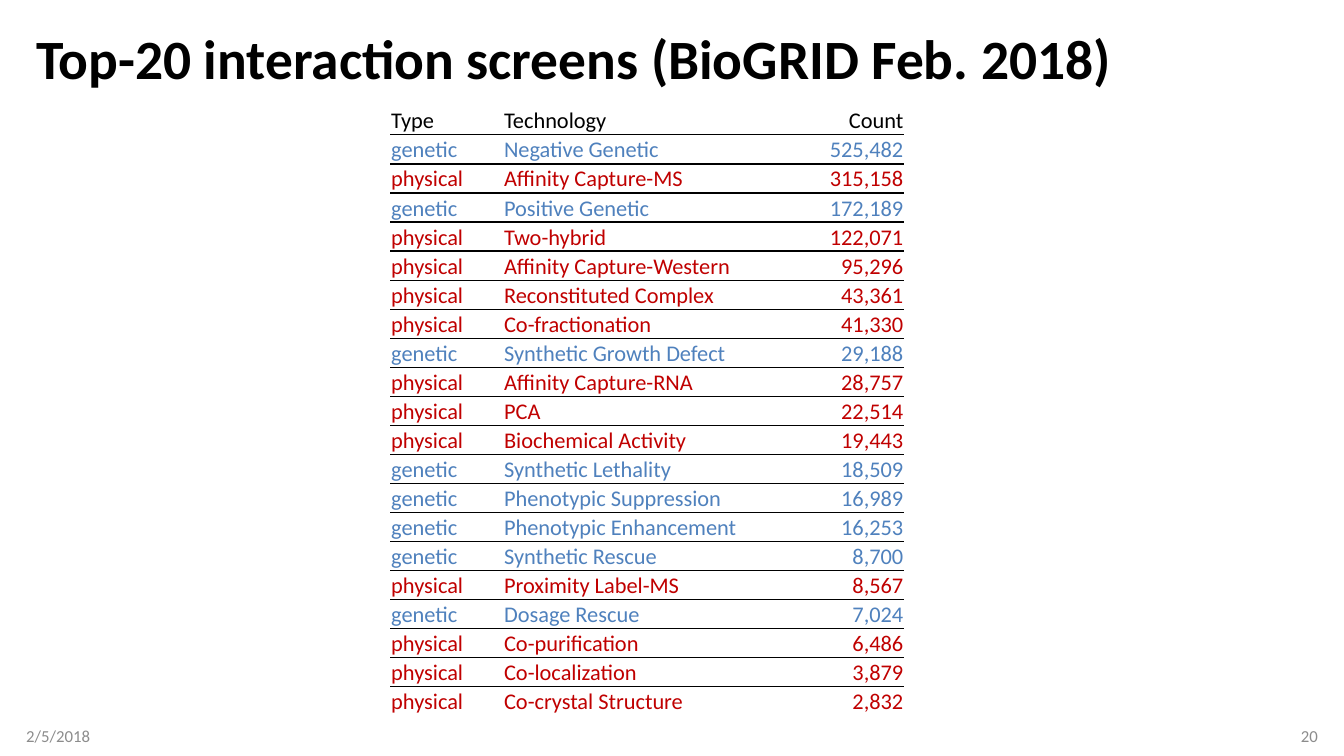
from dataclasses import dataclass

from pptx import Presentation
from pptx import util as u
from pptx.dml.color import RGBColor
from pptx.enum import text
from pptx.oxml import parse_xml
from pptx.oxml.ns import nsdecls


@dataclass(frozen=True)
class Theme:
    """Font, colours and type sizes of the slide."""
    font: str = "Calibri"
    ink: str = "000000"
    footer: str = "8C8C8C"
    genetic: str = "4F81BD"
    physical: str = "C00000"
    title_size: float = 39.6
    table_size: float = 16
    footer_size: float = 12
    plain_table: str = "{2D5ABB26-0587-4C30-8999-92F81FD0307C}"


THEME = Theme()
LEFT, RIGHT = text.PP_ALIGN.LEFT, text.PP_ALIGN.RIGHT
HEADINGS = ("Type", "Technology", "Count")
COLUMN_WIDTHS = (1.12, 2.86, 1.12)
ALIGNMENTS = (LEFT, LEFT, RIGHT)
SCREENS = (
    ("genetic", "Negative Genetic", 525482),
    ("physical", "Affinity Capture-MS", 315158),
    ("genetic", "Positive Genetic", 172189),
    ("physical", "Two-hybrid", 122071),
    ("physical", "Affinity Capture-Western", 95296),
    ("physical", "Reconstituted Complex", 43361),
    ("physical", "Co-fractionation", 41330),
    ("genetic", "Synthetic Growth Defect", 29188),
    ("physical", "Affinity Capture-RNA", 28757),
    ("physical", "PCA", 22514),
    ("physical", "Biochemical Activity", 19443),
    ("genetic", "Synthetic Lethality", 18509),
    ("genetic", "Phenotypic Suppression", 16989),
    ("genetic", "Phenotypic Enhancement", 16253),
    ("genetic", "Synthetic Rescue", 8700),
    ("physical", "Proximity Label-MS", 8567),
    ("genetic", "Dosage Rescue", 7024),
    ("physical", "Co-purification", 6486),
    ("physical", "Co-localization", 3879),
    ("physical", "Co-crystal Structure", 2832),
)


def apply(target, values):
    """Set attributes of the target from a dict."""
    for name, value in values.items():
        setattr(target, name, value)


def write(paragraph, words, size, color, bold=False, align=LEFT):
    """Write formatted words into a paragraph."""
    paragraph.alignment = align
    run = paragraph.add_run()
    run.text = words
    apply(run.font, {"name": THEME.font, "size": u.Pt(size), "bold": bold})
    run.font.color.rgb = RGBColor.from_string(color)


def add_label(slide, box, words, size, color, insets=(0.1, 0.1), spacing=None, **style):
    """Add a vertically centred line of text."""
    frame = slide.shapes.add_textbox(*map(u.Inches, box)).text_frame
    apply(frame, {
        "word_wrap": True,
        "vertical_anchor": text.MSO_ANCHOR.MIDDLE,
        "margin_left": u.Inches(insets[0]),
        "margin_right": u.Inches(insets[1]),
    })
    label = frame.paragraphs[0]
    label.line_spacing = spacing
    write(label, words, size, color, **style)


def rule_cell(cell, edges):
    """Draw thin rules on the given cell edges, top before bottom."""
    properties = cell._tc.get_or_add_tcPr()
    for position, edge in enumerate(edges):
        properties.insert(position, parse_xml(
            f'<a:{edge} {nsdecls("a")} w="{u.Pt(1)}"><a:solidFill>'
            f'<a:srgbClr val="{THEME.ink}"/></a:solidFill></a:{edge}>'))


def fill_row(table, index, values, color, edges):
    """Write one table row with its colour and rules."""
    for cell, value, align in zip(table.rows[index].cells, values, ALIGNMENTS):
        apply(cell, {
            "vertical_anchor": text.MSO_ANCHOR.BOTTOM,
            "margin_left": u.Inches(0.01),
            "margin_right": u.Inches(0.01),
            "margin_top": u.Inches(0.01),
            "margin_bottom": 0,
        })
        cell.fill.background()
        rule_cell(cell, edges)
        write(cell.text_frame.paragraphs[0], value, THEME.table_size, color, align=align)


def add_screens(slide):
    """Add the ranking of interaction screens, coloured by type."""
    last = len(SCREENS)
    box = map(u.Inches, (3.87, 1.05, sum(COLUMN_WIDTHS), 6.06))
    table = slide.shapes.add_table(last + 1, len(HEADINGS), *box).table
    apply(table, {"first_row": False, "horz_banding": False})
    table._tbl.tblPr.xpath("a:tableStyleId")[0].text = THEME.plain_table
    for column, width in zip(table.columns, COLUMN_WIDTHS):
        column.width = u.Inches(width)
    fill_row(table, 0, HEADINGS, THEME.ink, ["lnB"])
    for rank, (kind, technology, count) in enumerate(SCREENS, 1):
        edges = ["lnT", "lnB"] if rank < last else ["lnT"]
        fill_row(table, rank, (kind, technology, f"{count:,}"), getattr(THEME, kind), edges)


def main():
    """Build and save the slide."""
    deck = Presentation()
    apply(deck, {"slide_width": u.Inches(13.33), "slide_height": u.Inches(7.5)})
    slide = deck.slides.add_slide(deck.slide_layouts[6])
    add_label(slide, (0.26, 0.25, 12.81, 0.72), "Top-20 interaction screens (BioGRID Feb. 2018)",
              THEME.title_size, THEME.ink, spacing=0.9, bold=True)
    add_label(slide, (0.26, 7.1, 3, 0.4), "2/5/2018", THEME.footer_size, THEME.footer,
              insets=(0, 0.1))
    add_label(slide, (10.07, 7.1, 3, 0.4), "20", THEME.footer_size, THEME.footer,
              insets=(0.1, 0), align=RIGHT)
    add_screens(slide)
    deck.save("out.pptx")


if __name__ == "__main__":
    main()
